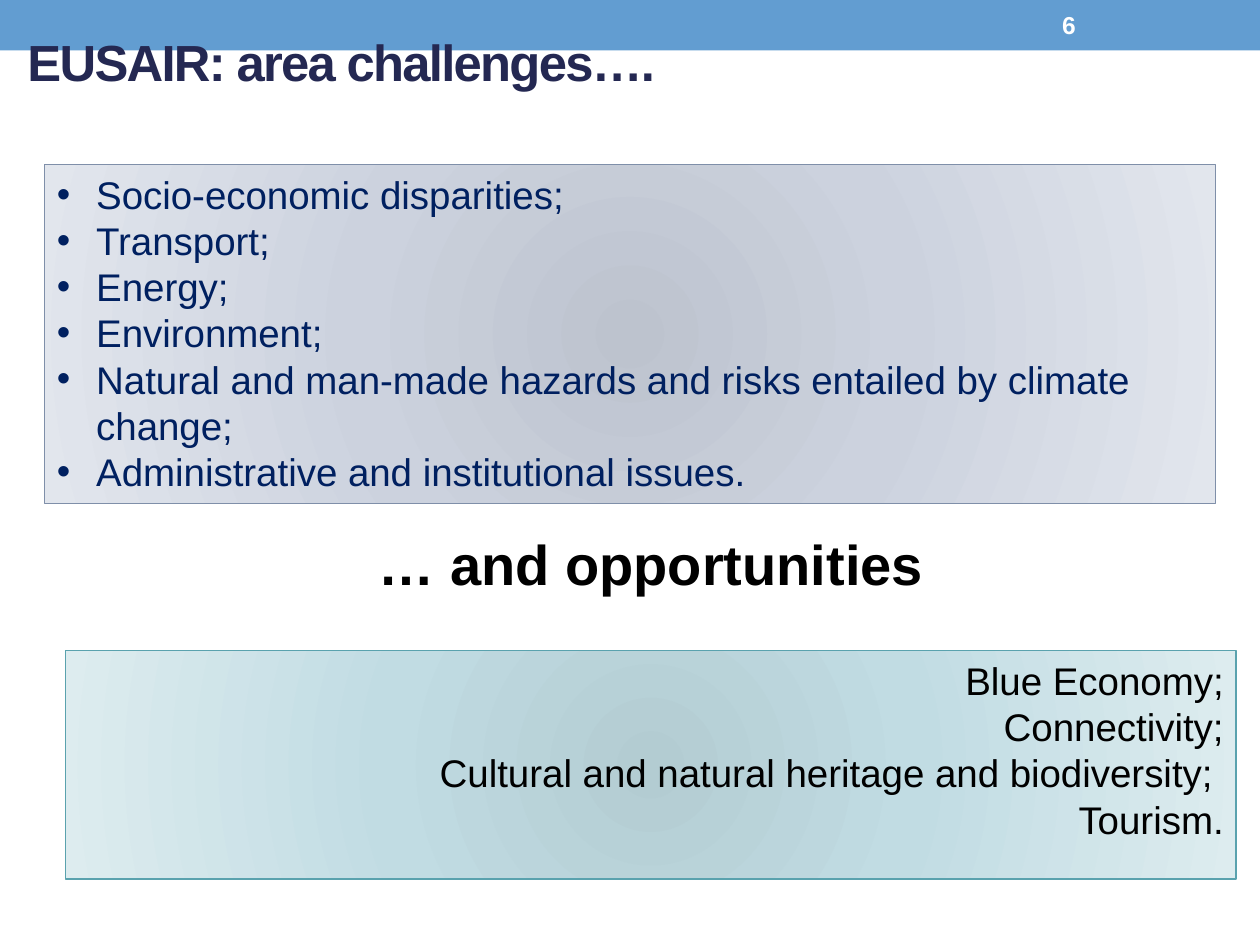
from lxml import etree
from pptx import Presentation
from pptx import util as u
from pptx.dml import color
from pptx.enum import shapes, text
from pptx.oxml import ns

RISKS = [
    "Socio-economic disparities;",
    "Transport;",
    "Energy;",
    "Environment;",
    "Natural and man-made hazards and risks entailed by climate change;",
    "Administrative and institutional issues.",
]
GAINS = [
    "Blue Economy;",
    "Connectivity;",
    "Cultural and natural heritage and biodiversity; ",
    "Tourism.",
]


def tint(code):
    return color.RGBColor.from_string(code)


def node(root, tag, **attrs):
    item = etree.SubElement(root, ns.qn(tag))
    for key, val in attrs.items():
        item.set(key, str(val))
    return item


def write(frame, lines, size=22, ink="000000", bold=False, side="LEFT",
          mid=False, dots=False, track=0, font="Arial"):
    frame.word_wrap = True
    frame.auto_size = text.MSO_AUTO_SIZE.NONE
    frame.vertical_anchor = text.MSO_ANCHOR.MIDDLE if mid else text.MSO_ANCHOR.TOP
    for i, line in enumerate(lines):
        para = frame.add_paragraph() if i else frame.paragraphs[0]
        para.alignment = getattr(text.PP_ALIGN, side)
        para.line_spacing = 1.0
        run = para.add_run()
        run.text = line
        run.font.name = font
        run.font.size = u.Pt(size)
        run.font.bold = bold
        run.font.color.rgb = tint(ink)
        if track:
            run.font._element.set("spc", str(track))
        if dots:
            props = para._p.get_or_add_pPr()
            hang = u.Cm(0.79)
            props.set("marL", str(hang))
            props.set("indent", str(-hang))
            node(props, "a:buFont", typeface=font)
            node(props, "a:buChar", char="•")


class Deck:
    def __init__(self, wide, high):
        self.file = Presentation()
        self.file.slide_width = u.Cm(wide)
        self.file.slide_height = u.Cm(high)
        self.slide = self.file.slides.add_slide(self.file.slide_layouts[5])

    def rect(self, box):
        shape = self.slide.shapes.add_shape(
            shapes.MSO_SHAPE.RECTANGLE, *map(u.Cm, box))
        shape.shadow.inherit = False
        return shape

    def band(self, box, fill):
        shape = self.rect(box)
        shape.fill.solid()
        shape.fill.fore_color.rgb = tint(fill)
        shape.line.fill.background()
        self.slide.shapes.title.element.addprevious(shape.element)

    def title(self, box, line, **form):
        shape = self.slide.shapes.title
        shape.left, shape.top, shape.width, shape.height = map(u.Cm, box)
        write(shape.text_frame, [line], **form)

    def label(self, box, line, **form):
        shape = self.slide.shapes.add_textbox(*map(u.Cm, box))
        write(shape.text_frame, [line], **form)

    def panel(self, box, lines, fills, edge, **form):
        shape = self.rect(box)
        shape.line.color.rgb = tint(edge)
        shape.line.width = u.Pt(0.75)
        grad = etree.Element(ns.qn("a:gradFill"), rotWithShape="1")
        stops = node(grad, "a:gsLst")
        for pos, fill in zip((0, 45, 100), fills):
            stop = node(stops, "a:gs", pos=pos * 1000)
            node(stop, "a:srgbClr", val=fill)
        way = node(grad, "a:path", path="circle")
        node(way, "a:fillToRect", **dict.fromkeys("ltrb", 100000))
        shape.element.spPr.find(ns.qn("a:prstGeom")).addnext(grad)
        write(shape.text_frame, lines, **form)


def main():
    deck = Deck(25.4, 19.05)
    deck.band((0, 0, 25.4, 1.02), "629DD1")
    deck.title((0.3, 0.13, 22.86, 2.2), "EUSAIR: area challenges….",
               size=29, ink="242852", bold=True, mid=True, track=-100)
    deck.panel((0.9, 3.32, 23.6, 6.83), RISKS,
               ("BDC3CE", "CCD2DE", "E2E6ED"), "7F8FA9",
               ink="002060", dots=True)
    deck.label((1.7, 10.15, 22.86, 2.39), "… and opportunities",
               size=32, bold=True, side="CENTER", mid=True)
    deck.panel((1.32, 13.12, 23.6, 4.6), GAINS,
               ("B3CCD2", "C1DCE3", "DDECEF"), "5AA2AE", side="RIGHT")
    deck.label((21.16, 0.05, 2.97, 0.91), "6",
               size=14, ink="FFFFFF", bold=True, mid=True)
    deck.file.save("out.pptx")


if __name__ == "__main__":
    main()
